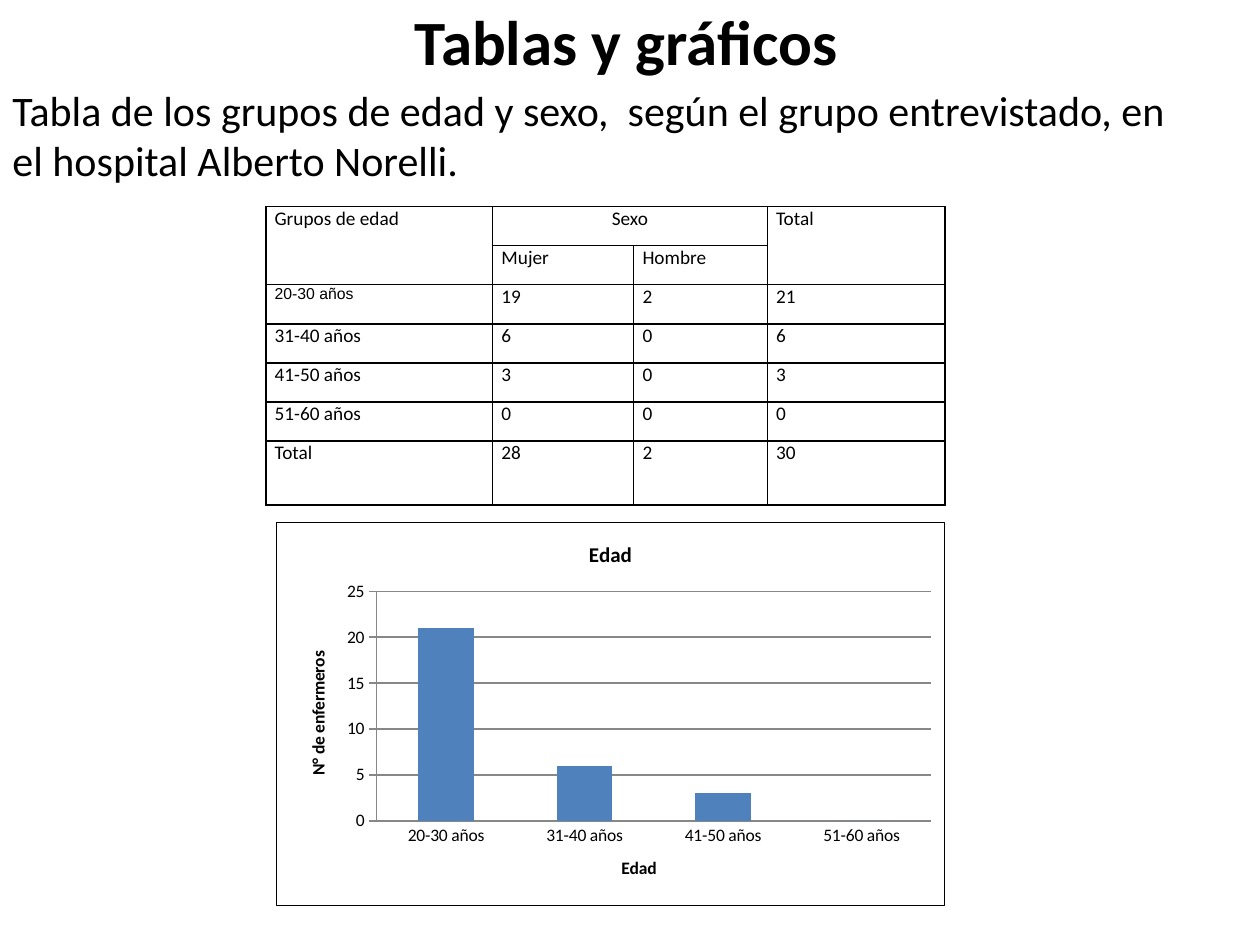
from lxml import etree
from pptx import Presentation
from pptx.chart.data import CategoryChartData
from pptx.dml.color import RGBColor
from pptx.enum.chart import XL_CHART_TYPE, XL_TICK_MARK
from pptx.enum.text import MSO_ANCHOR, PP_ALIGN
from pptx.oxml import parse_xml
from pptx.oxml.ns import nsdecls, qn
from pptx.util import Inches, Pt

COLUMN = XL_CHART_TYPE.COLUMN_CLUSTERED
NONE, CROSS = XL_TICK_MARK.NONE, XL_TICK_MARK.CROSS
MIDDLE, CENTER, LEFT = MSO_ANCHOR.MIDDLE, PP_ALIGN.CENTER, PP_ALIGN.LEFT
BLACK, BLUE, GRAY = "000000", "4F81BD", "878787"


def color(code):
    return RGBColor.from_string(code)


def write(frame, text, size, bold=False, align=LEFT, face="Calibri"):
    """Put one formatted run in the first paragraph of a text frame."""
    par = frame.paragraphs[0]
    par.alignment = align
    run = par.add_run()
    run.text = text
    run.font.name, run.font.size, run.font.bold = face, Pt(size), bold
    run.font.color.rgb = color(BLACK)


prs = Presentation()
prs.slide_width, prs.slide_height = Inches(10), Inches(7.5)
slide = prs.slides.add_slide(prs.slide_layouts[5])

# Title and caption
title = slide.shapes.title
title.left, title.top = Inches(0.47), Inches(0)
title.width, title.height = Inches(9), Inches(0.64)
title.text_frame.vertical_anchor = MIDDLE
write(title.text_frame, "Tablas y gráficos", 36, True, CENTER)

box = slide.shapes.add_textbox(Inches(0), Inches(0.62), Inches(9.61), Inches(0.91))
box.text_frame.word_wrap = True
write(box.text_frame, "Tabla de los grupos de edad y sexo,  según el grupo "
      "entrevistado, en el hospital Alberto Norelli.", 24)

# Table of ages by sex
ages = ["20-30 años", "31-40 años", "41-50 años", "51-60 años"]
women, men = [19, 6, 3, 0], [2, 0, 0, 0]
totals = [w + m for w, m in zip(women, men)]
rows = [["Grupos de edad", "Sexo", "", "Total"], ["", "Mujer", "Hombre", ""]]
rows += zip(ages, women, men, totals)
rows.append(["Total", sum(women), sum(men), sum(totals)])
widths = [1.8, 1.12, 1.06, 1.41]
heights = [0.31] * 6 + [0.51]

table = slide.shapes.add_table(len(rows), len(widths), Inches(2.11), Inches(1.64),
                               Inches(sum(widths)), Inches(sum(heights))).table
table.first_row = table.horz_banding = False
for col, width in zip(table.columns, widths):
    col.width = Inches(width)
for row, height in zip(table.rows, heights):
    row.height = Inches(height)

for r, row in enumerate(rows):
    for c, value in enumerate(row):
        cell = table.cell(r, c)
        cell.margin_left = cell.margin_right = Inches(0.07)
        cell.margin_top = cell.margin_bottom = Inches(0)
        props = cell._tc.get_or_add_tcPr()
        for side in ("lnL", "lnR", "lnT", "lnB"):
            props.append(parse_xml(
                f'<a:{side} {nsdecls("a")} w="{Pt(1)}"><a:solidFill>'
                f'<a:srgbClr val="{BLACK}"/></a:solidFill></a:{side}>'))
        cell.fill.background()
        small = value == ages[0]
        write(cell.text_frame, str(value), 9 if small else 11,
              align=CENTER if value == "Sexo" else LEFT,
              face="Arial" if small else "Calibri")
for start, end in [((0, 0), (1, 0)), ((0, 1), (0, 2)), ((0, 3), (1, 3))]:
    table.cell(*start).merge(table.cell(*end))

# Chart of nurses by age
data = CategoryChartData()
data.categories = ages
data.add_series("Edad", totals)
chart = slide.shapes.add_chart(COLUMN, Inches(2.19), Inches(4.14), Inches(5.31),
                               Inches(3.05), data).chart
chart.has_legend = False
chart.font.name, chart.font.size = "Calibri", Pt(10)
chart.font.color.rgb = color(BLACK)
chart.has_title = True
write(chart.chart_title.text_frame, "Edad", 12, True, CENTER)

plot = chart.plots[0]
plot.gap_width, plot.vary_by_categories = 150, False
bars = plot.series[0].format.fill
bars.solid()
bars.fore_color.rgb = color(BLUE)

across, up = chart.category_axis, chart.value_axis
for axis, name, tick in [(across, "Edad", NONE), (up, "N° de enfermeros", CROSS)]:
    axis.has_title = True
    write(axis.axis_title.text_frame, name, 10, True, CENTER)
    axis.major_tick_mark, axis.minor_tick_mark = tick, NONE
    axis.format.line.color.rgb = color(GRAY)
up.minimum_scale, up.maximum_scale, up.major_unit = 0, 25, 5
up.has_major_gridlines = True
up.major_gridlines.format.line.color.rgb = color(GRAY)

# Inner plot area as shares of the chart, then the chart's border
area = chart.element.find(".//" + qn("c:plotArea"))
for old in area.findall(qn("c:layout")):
    area.remove(old)
layout = etree.Element(qn("c:layout"))
manual = etree.SubElement(layout, qn("c:manualLayout"))
for tag, val in [("layoutTarget", "inner"), ("xMode", "edge"), ("yMode", "edge"),
                 ("x", "0.15"), ("y", "0.18"), ("w", "0.83"), ("h", "0.6")]:
    etree.SubElement(manual, qn("c:" + tag)).set("val", val)
area.insert(0, layout)
chart.element.find(qn("c:chart")).addnext(parse_xml(
    f'<c:spPr {nsdecls("c", "a")}><a:noFill/><a:ln w="{Pt(0.75)}"><a:solidFill>'
    f'<a:srgbClr val="{BLACK}"/></a:solidFill></a:ln></c:spPr>'))

prs.save("out.pptx")
